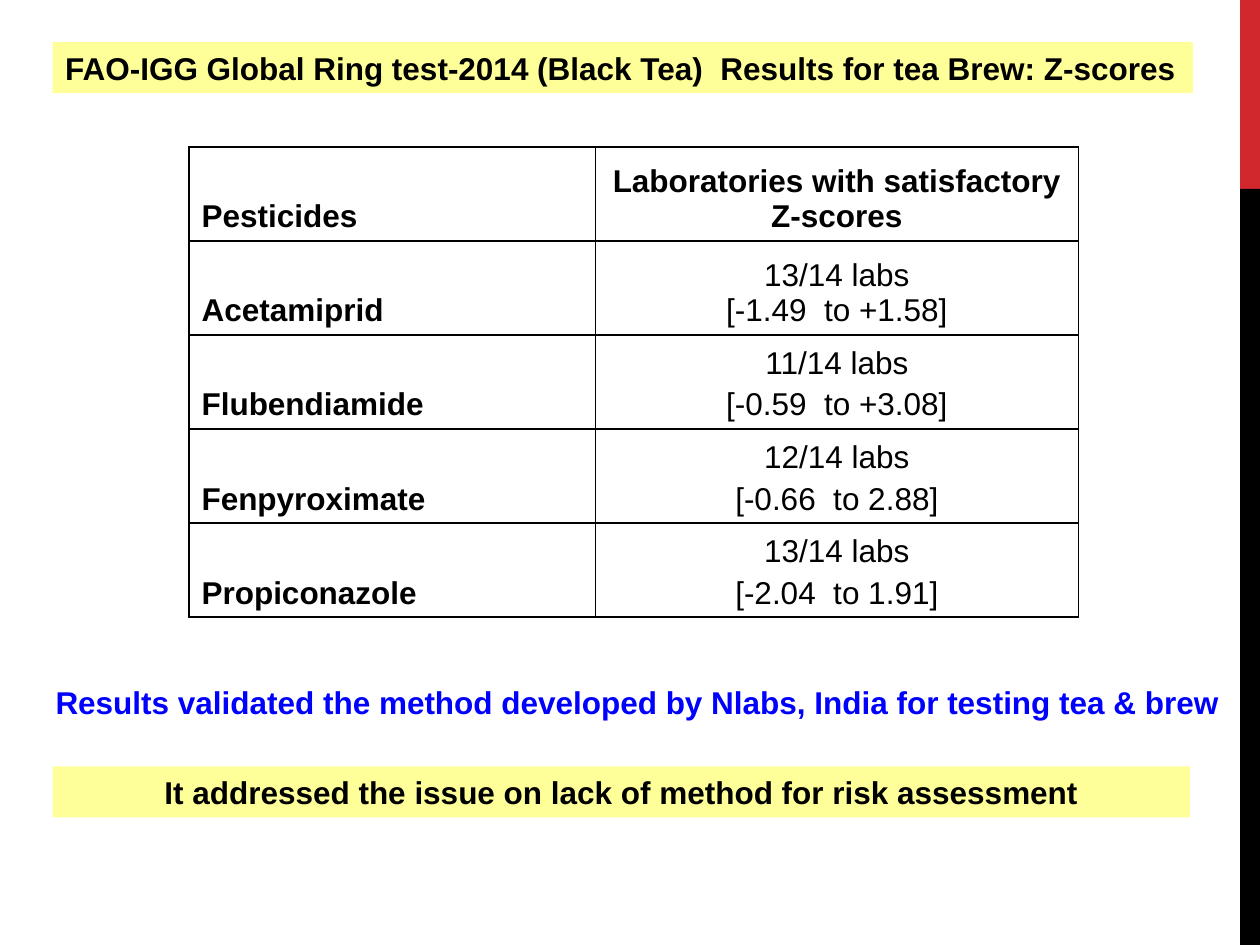
from lxml.etree import SubElement
from pptx import Presentation
from pptx.dml.color import RGBColor
from pptx.enum.shapes import MSO_SHAPE
from pptx.enum.text import MSO_ANCHOR, PP_ALIGN
from pptx.oxml.ns import qn
from pptx.util import Cm, Pt

BLACK = RGBColor(0x00, 0x00, 0x00)
RED = RGBColor(0xD1, 0x28, 0x2E)
YELLOW = RGBColor(0xFF, 0xFF, 0x99)
BLUE = RGBColor(0x00, 0x00, 0xFF)

TITLE = "FAO-IGG Global Ring test-2014 (Black Tea)  Results for tea Brew: Z-scores"
CONCLUSION = "Results validated the method developed by Nlabs, India for testing tea & brew"
OUTCOME = "It addressed the issue on lack of method for risk assessment"
HEADER = ("Pesticides", ("Laboratories with satisfactory", "Z-scores"))
RESULTS = (
    ("Acetamiprid", ("13/14 labs", "[-1.49  to +1.58]"), 0),
    ("Flubendiamide", ("11/14 labs", "[-0.59  to +3.08]"), 3.6),
    ("Fenpyroximate", ("12/14 labs", "[-0.66  to 2.88]"), 3.6),
    ("Propiconazole", ("13/14 labs", "[-2.04  to 1.91]"), 3.6),
)


def write_lines(text_frame, lines, color=BLACK, bold=True, align=PP_ALIGN.LEFT, before=0):
    """Write each line as a paragraph of 18 point Arial."""
    for index, line in enumerate(lines):
        paragraph = text_frame.add_paragraph() if index else text_frame.paragraphs[0]
        paragraph.alignment = align
        paragraph.space_before = Pt(before)
        run = paragraph.add_run()
        run.text = line
        run.font.name = "Arial"
        run.font.size = Pt(18)
        run.font.bold = bold
        run.font.color.rgb = color


def add_block(slide, left, top, width, height, color):
    """Add a plain filled rectangle."""
    shape = slide.shapes.add_shape(MSO_SHAPE.RECTANGLE, left, top, width, height)
    shape.shadow.inherit = False
    shape.fill.solid()
    shape.fill.fore_color.rgb = color
    shape.line.fill.background()
    return shape


def add_side_bar(slide, left, top, width, height):
    """Add the edge bar, red in its top fifth and black below."""
    red_height = height // 5
    add_block(slide, left, top, width, red_height, RED)
    add_block(slide, left, top + red_height, width, height - red_height, BLACK)


def place_title(slide, left, top, width, height):
    """Move and format the title placeholder as a yellow banner."""
    title = slide.shapes.title
    title.left, title.top, title.width, title.height = left, top, width, height
    title.fill.solid()
    title.fill.fore_color.rgb = YELLOW
    title.text_frame.word_wrap = False
    title.text_frame.vertical_anchor = MSO_ANCHOR.MIDDLE
    write_lines(title.text_frame, [TITLE])


def format_cell(cell):
    """Clear the cell fill, anchor its text low and draw black borders."""
    properties = cell._tc.get_or_add_tcPr()
    for side in ("lnL", "lnR", "lnT", "lnB"):
        border = SubElement(properties, qn(f"a:{side}"), w=str(Pt(1)))
        fill = SubElement(border, qn("a:solidFill"))
        SubElement(fill, qn("a:srgbClr"), val=str(BLACK))
    cell.fill.background()
    cell.vertical_anchor = MSO_ANCHOR.BOTTOM


def add_results_table(slide, left, top, width, height):
    """Add the table of pesticides and laboratory scores."""
    row_count = len(RESULTS) + 1
    table = slide.shapes.add_table(row_count, 2, left, top, width, height).table
    table.first_row = False
    table.horz_banding = False
    table.columns[0].width = Cm(8.19)
    table.columns[1].width = width - Cm(8.19)
    for cell in table.iter_cells():
        format_cell(cell)
    for index, (name, scores, before) in enumerate(((*HEADER, 0), *RESULTS)):
        write_lines(table.cell(index, 0).text_frame, [name])
        write_lines(table.cell(index, 1).text_frame, scores, bold=index == 0,
                    align=PP_ALIGN.CENTER, before=before)


def add_conclusion(slide, left, top, width, height):
    """Add the blue concluding sentence."""
    text_frame = slide.shapes.add_textbox(left, top, width, height).text_frame
    text_frame.word_wrap = False
    write_lines(text_frame, [CONCLUSION], color=BLUE)


def add_outcome(slide, left, top, width, height):
    """Add the yellow banner with the outcome."""
    banner = add_block(slide, left, top, width, height, YELLOW)
    banner.text_frame.word_wrap = True
    write_lines(banner.text_frame, [OUTCOME], align=PP_ALIGN.CENTER)


def main():
    """Build and save the slide."""
    presentation = Presentation()
    presentation.slide_width = Cm(25.4)
    presentation.slide_height = Cm(19.05)
    slide = presentation.slides.add_slide(presentation.slide_layouts[5])
    add_side_bar(slide, Cm(25), Cm(0), Cm(0.4), Cm(19.05))
    place_title(slide, Cm(1.06), Cm(0.85), Cm(22.99), Cm(1.03))
    add_results_table(slide, Cm(3.81), Cm(2.96), Cm(17.93), Cm(9.48))
    add_conclusion(slide, Cm(0.87), Cm(13.65), Cm(24.13), Cm(1.03))
    add_outcome(slide, Cm(1.06), Cm(15.45), Cm(22.93), Cm(1.03))
    presentation.save("out.pptx")


if __name__ == "__main__":
    main()
